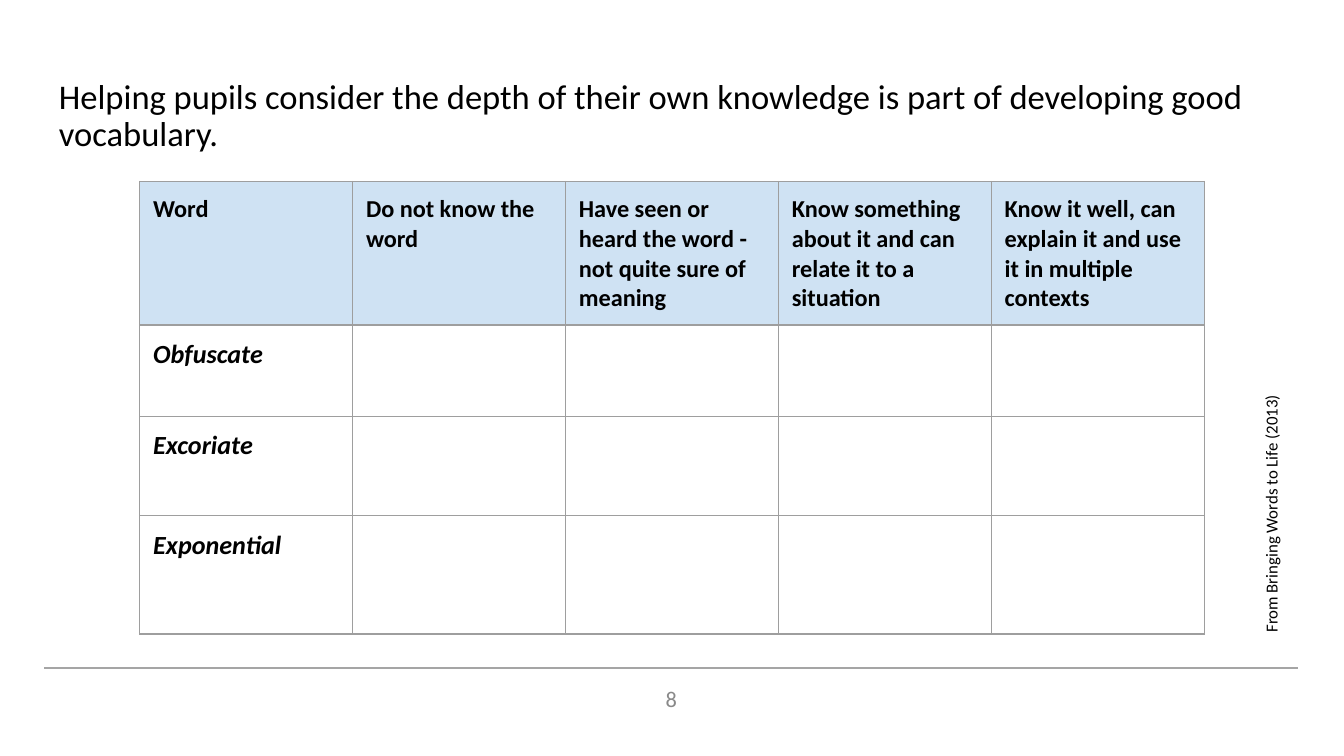
from dataclasses import dataclass

from lxml import etree
from pptx import Presentation
from pptx.dml.color import RGBColor
from pptx.enum import shapes, text
from pptx.oxml import ns
from pptx.util import Inches, Pt


@dataclass(frozen=True)
class Theme:
    font: str = "Calibri"
    ink: str = "000000"
    muted: str = "898989"
    rule: str = "A5A5A5"
    grid: str = "9E9E9E"
    header: str = "CFE2F3"
    line: float = 0.75
    title_size: float = 18.5
    header_size: float = 13
    word_size: float = 14
    page_size: float = 12
    source_size: float = 9


THEME = Theme()
LEVELS = [
    "Word",
    "Do not know the word",
    "Have seen or heard the word - not quite sure of meaning",
    "Know something about it and can relate it to a situation",
    "Know it well, can explain it and use it in multiple contexts",
]
WORDS = ["Obfuscate", "Excoriate", "Exponential"]


def add_run(paragraph, wording, size, color=THEME.ink, bold=False, italic=False):
    run = paragraph.add_run()
    run.text = wording
    font = run.font
    font.name, font.size = THEME.font, Pt(size)
    font.bold, font.italic = bold, italic
    font.color.rgb = RGBColor.from_string(color)


def add_label(slide, box, wording, size, color=THEME.ink, inset=0.1):
    """Add a wrapped one-paragraph text box and return it."""
    label = slide.shapes.add_textbox(*map(Inches, box))
    frame = label.text_frame
    frame.word_wrap = True
    frame.margin_left = frame.margin_right = Inches(0.1)
    frame.margin_top = frame.margin_bottom = Inches(inset)
    add_run(frame.paragraphs[0], wording, size, color)
    return label


def add_title(slide, box):
    title = add_label(
        slide, box,
        "Helping pupils consider the depth of their own knowledge "
        "is part of developing good vocabulary.",
        THEME.title_size)
    title.text_frame.paragraphs[0].line_spacing = 0.9


def add_borders(cell):
    """Draw all four borders; they must come before the fill in tcPr."""
    properties = cell._tc.get_or_add_tcPr()
    for position, side in enumerate(("a:lnL", "a:lnR", "a:lnT", "a:lnB")):
        border = etree.Element(ns.qn(side), w=str(Pt(THEME.line)))
        fill = etree.SubElement(border, ns.qn("a:solidFill"))
        etree.SubElement(fill, ns.qn("a:srgbClr"), val=THEME.grid)
        properties.insert(position, border)


def add_knowledge_table(slide, box, row_heights):
    rows = [LEVELS] + [[word] + [""] * (len(LEVELS) - 1) for word in WORDS]
    table = slide.shapes.add_table(
        len(rows), len(LEVELS), *map(Inches, box)).table
    table.first_row = table.horz_banding = False
    for column in table.columns:
        column.width = Inches(box[2] / len(LEVELS))

    for r, (wordings, height) in enumerate(zip(rows, row_heights)):
        table.rows[r].height = Inches(height)
        is_header = r == 0
        for c, wording in enumerate(wordings):
            cell = table.cell(r, c)
            cell.margin_left = cell.margin_right = Inches(0.1)
            cell.margin_top = cell.margin_bottom = Inches(0.1)
            if is_header:
                cell.fill.solid()
                cell.fill.fore_color.rgb = RGBColor.from_string(THEME.header)
            else:
                cell.fill.background()
            add_borders(cell)
            if wording:
                size = THEME.header_size if is_header else THEME.word_size
                add_run(cell.text_frame.paragraphs[0], wording, size,
                        bold=True, italic=not is_header)


def add_source(slide, box):
    source = add_label(slide, box, "From Bringing Words to Life (2013)",
                       THEME.source_size)
    source.text_frame.auto_size = text.MSO_AUTO_SIZE.SHAPE_TO_FIT_TEXT
    source.rotation = 270


def add_footer(slide, box):
    """Add a rule along the top of the box and the page number below it."""
    left, top, width, height = box
    rule = slide.shapes.add_connector(
        shapes.MSO_CONNECTOR.STRAIGHT,
        Inches(left), Inches(top), Inches(left + width), Inches(top))
    rule.line.color.rgb = RGBColor.from_string(THEME.rule)
    rule.line.width = Pt(THEME.line)
    etree.SubElement(rule._element.spPr, ns.qn("a:effectLst"))

    number_width = width / 4
    number_box = (left + (width - number_width) / 2, top + 0.03,
                  number_width, height - 0.03)
    number = add_label(slide, number_box, "8", THEME.page_size,
                       THEME.muted, inset=0.05)
    number.text_frame.vertical_anchor = text.MSO_ANCHOR.MIDDLE
    number.text_frame.paragraphs[0].alignment = text.PP_ALIGN.CENTER


def main():
    deck = Presentation()
    deck.slide_width = Inches(10)
    deck.slide_height = deck.slide_width * 9 // 16
    slide = deck.slides.add_slide(deck.slide_layouts[6])
    add_footer(slide, (0.33, 4.97, 9.33, 0.43))
    add_title(slide, (0.34, 0.49, 9.32, 0.63))
    add_knowledge_table(slide, (1.04, 1.35, 7.92, 3.31),
                        (1.01, 0.68, 0.74, 0.88))
    add_source(slide, (7.63, 2.78, 3.7, 0.35))
    deck.save("out.pptx")


if __name__ == "__main__":
    main()
